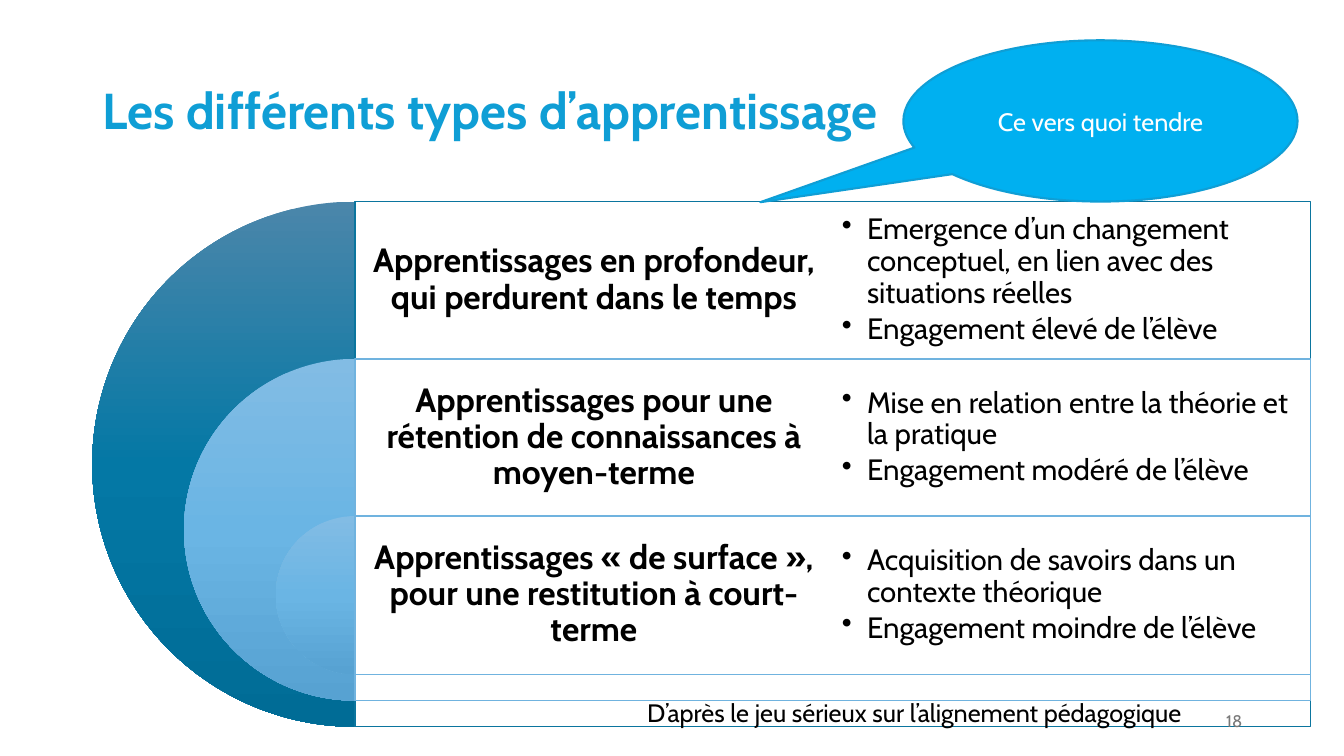
import copy

import pptx
import pptx.dml.color
import pptx.enum.shapes
import pptx.enum.text
import pptx.oxml
import pptx.oxml.ns
import pptx.util

Inches = pptx.util.Inches
Pt = pptx.util.Pt
RGBColor = pptx.dml.color.RGBColor
MSO_SHAPE = pptx.enum.shapes.MSO_SHAPE
PP_ALIGN = pptx.enum.text.PP_ALIGN
MSO_ANCHOR = pptx.enum.text.MSO_ANCHOR
qn = pptx.oxml.ns.qn

BLACK = RGBColor(0x00, 0x00, 0x00)
WHITE = RGBColor(0xFF, 0xFF, 0xFF)
GREY = RGBColor(0x79, 0x79, 0x79)
TITLE_BLUE = RGBColor(0x0F, 0x9E, 0xD5)
CALLOUT_BLUE = RGBColor(0x00, 0xB0, 0xF0)
DARK_LINE = RGBColor(0x0B, 0x75, 0x9E)
LIGHT_LINE = RGBColor(0x70, 0xB3, 0xDF)
DARK_BLUES = (RGBColor(0x4B, 0x86, 0xAA), RGBColor(0x04, 0x78, 0xA5), RGBColor(0x00, 0x6C, 0x96))
LIGHT_BLUES = (RGBColor(0x82, 0xBC, 0xE4), RGBColor(0x6A, 0xB5, 0xE4), RGBColor(0x57, 0xA2, 0xD2))

# Heading, bullets, gradient and outline of each level, outermost first
LEVELS = [
    ("Apprentissages en profondeur, qui perdurent dans le temps",
     ["Emergence d’un changement conceptuel, en lien avec des situations réelles",
      "Engagement élevé de l’élève"], DARK_BLUES, DARK_LINE),
    ("Apprentissages pour une rétention de connaissances à moyen-terme",
     ["Mise en relation entre la théorie et la pratique",
      "Engagement modéré de l’élève"], LIGHT_BLUES, LIGHT_LINE),
    ("Apprentissages « de surface », pour une restitution à court-terme",
     ["Acquisition de savoirs dans un contexte théorique",
      "Engagement moindre de l’élève"], LIGHT_BLUES, LIGHT_LINE),
]
TOP, ROW_H = 2, 1.56
AXIS, COL_W = 3.52, 4.74
DIAMETER, SHRINK = 5.21, 1.82


class SlideBuilder:
    font = "Cabin"

    def __init__(self, slide):
        self.slide = slide

    def fill_text(self, sp, lines, size, color=BLACK, bold=False, align=PP_ALIGN.LEFT,
                  anchor=MSO_ANCHOR.MIDDLE, inset=None, spacing=None, bullets=False):
        tf = sp.text_frame
        tf.word_wrap = True
        tf.vertical_anchor = anchor
        if inset is not None:
            tf.margin_left = tf.margin_right = Inches(inset)
            tf.margin_top = tf.margin_bottom = Inches(inset)
        for i, line in enumerate(lines):
            p = tf.paragraphs[0] if i == 0 else tf.add_paragraph()
            p.text = line
            p.alignment = align
            if spacing:
                p.line_spacing = spacing
            if bullets:
                p.space_after = Pt(3)
                self.add_bullet(p)
            for r in p.runs:
                r.font.name = self.font
                r.font.size = Pt(size)
                r.font.bold = bold
                r.font.color.rgb = color

    def add_bullet(self, p):
        pPr = p._p.get_or_add_pPr()
        pPr.set("marL", str(Inches(0.25)))
        pPr.set("indent", str(-Inches(0.25)))
        bullet = pptx.oxml.parse_xml(
            f'<a:buChar {pptx.oxml.ns.nsdecls("a")} char="•"/>')
        pPr.append(bullet)

    def text(self, box, lines, size, **style):
        sp = self.slide.shapes.add_textbox(*map(Inches, box))
        self.fill_text(sp, lines, size, **style)

    def shape(self, kind, box, fill=None, line=None, width=1, adjust=()):
        sp = self.slide.shapes.add_shape(kind, *map(Inches, box))
        sp.shadow.inherit = False
        for i, value in enumerate(adjust):
            sp.adjustments[i] = value
        if fill is not None:
            sp.fill.solid()
            sp.fill.fore_color.rgb = fill
        if line is None:
            sp.line.fill.background()
        else:
            sp.line.color.rgb = line
            sp.line.width = Pt(width)
        return sp

    def half_disc(self, box, colors):
        sp = self.shape(MSO_SHAPE.PIE, box, adjust=(54, 162))
        sp.fill.gradient()
        sp.fill.gradient_angle = 270
        stops = sp._element.spPr.find(".//" + qn("a:gsLst"))
        stops.append(copy.deepcopy(stops[-1]))
        for i, (stop, color) in enumerate(zip(sp.fill.gradient_stops, colors)):
            stop.position = i / 2
            stop.color.rgb = color

    def panel(self, box, line):
        sp = self.shape(MSO_SHAPE.RECTANGLE, box, WHITE, line)
        color = sp._element.spPr.find(qn("a:solidFill"))[0]
        color.append(pptx.oxml.parse_xml(
            f'<a:alpha {pptx.oxml.ns.nsdecls("a")} val="90000"/>'))


def main():
    prs = pptx.Presentation()
    prs.slide_width, prs.slide_height = Inches(13.33), Inches(7.5)
    s = SlideBuilder(prs.slides.add_slide(prs.slide_layouts[6]))

    # Title
    s.text((0.92, 0.4, 11.5, 1.45), ["Les différents types d’apprentissage"], 36,
           color=TITLE_BLUE, bold=True, spacing=0.9)

    # Nested half discs with their panels and texts
    for i, (heading, points, colors, line) in enumerate(LEVELS):
        top = TOP + i * ROW_H
        size = DIAMETER - i * SHRINK
        s.half_disc((AXIS - size / 2, top, size, size), colors)
        s.panel((AXIS, top, 2 * COL_W, size), line)
        s.text((AXIS, top, COL_W, ROW_H), [heading], 24, bold=True,
               align=PP_ALIGN.CENTER, inset=0.1, spacing=0.9)
        s.text((AXIS + COL_W, top, COL_W, ROW_H), points, 21,
               inset=0.09, spacing=0.9, bullets=True)

    # Slide number and credit
    s.text((9.42, 6.95, 3, 0.4), ["18"], 12, color=GREY, align=PP_ALIGN.RIGHT)
    s.text((6.32, 6.87, 5.63, 0.4),
           ["D’après le jeu sérieux sur l’alignement pédagogique"], 18,
           anchor=MSO_ANCHOR.TOP)

    # Callout
    callout = s.shape(MSO_SHAPE.OVAL_CALLOUT, (8.96, 0.4, 3.91, 1.6), CALLOUT_BLUE,
                      TITLE_BLUE, 1.5, adjust=(-0.863, 0.504))
    s.fill_text(callout, ["Ce vers quoi tendre"], 18, color=WHITE, align=PP_ALIGN.CENTER)

    prs.save("out.pptx")


if __name__ == "__main__":
    main()
